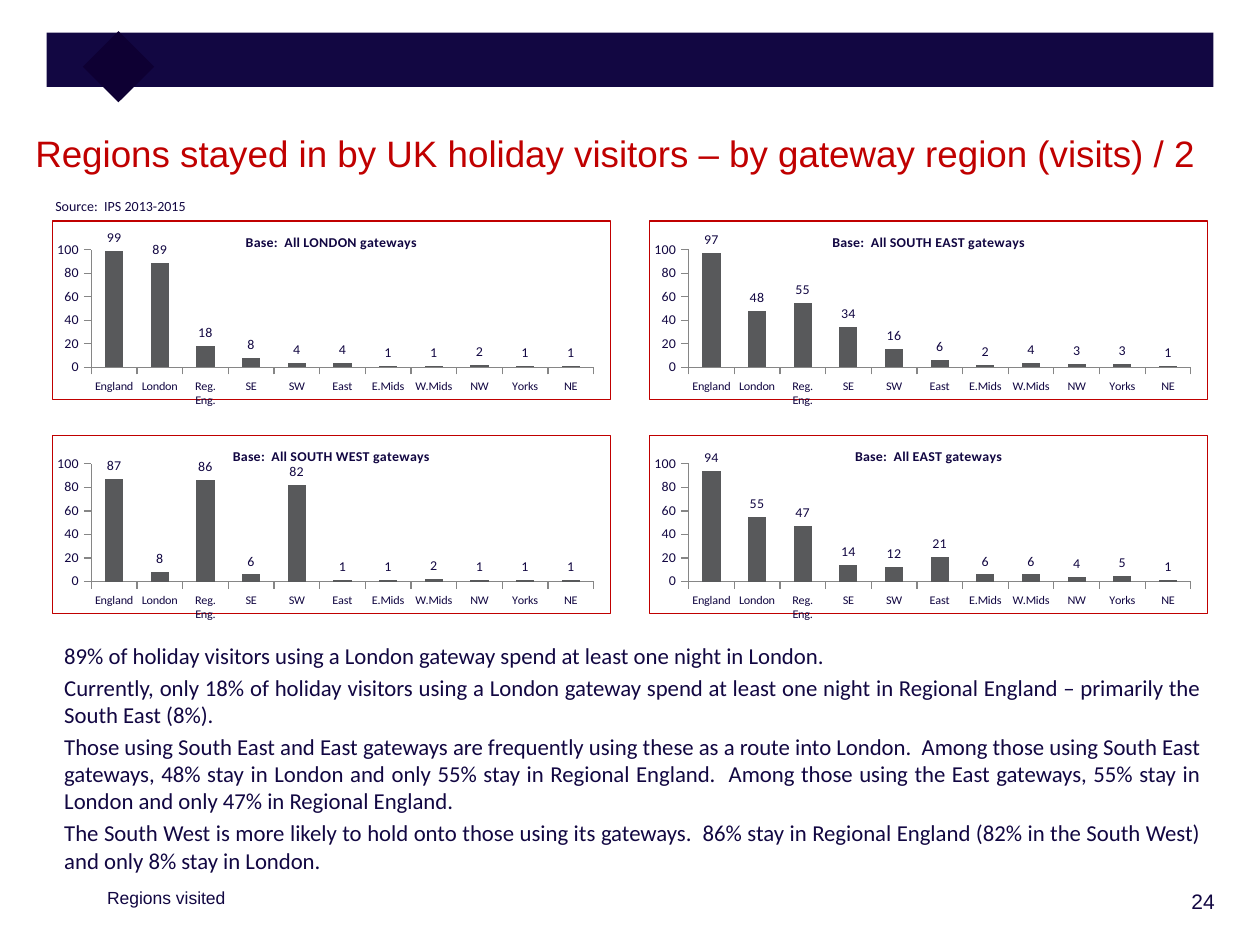
"""Build the slide on regions stayed in by UK holiday visitors, by gateway."""
from dataclasses import dataclass

from lxml import etree
from pptx import Presentation
from pptx.chart.data import CategoryChartData
from pptx.dml.color import RGBColor
from pptx.enum.chart import XL_CHART_TYPE, XL_LABEL_POSITION, XL_TICK_MARK
from pptx.enum.shapes import MSO_SHAPE
from pptx.enum.text import MSO_ANCHOR, MSO_AUTO_SIZE, PP_ALIGN
from pptx.oxml import parse_xml
from pptx.oxml.ns import nsdecls, qn
from pptx.util import Inches, Pt

COLUMNS = XL_CHART_TYPE.COLUMN_CLUSTERED
OUTSIDE_END = XL_LABEL_POSITION.OUTSIDE_END
TICK_OUTSIDE, TICK_NONE = XL_TICK_MARK.OUTSIDE, XL_TICK_MARK.NONE
RECTANGLE = MSO_SHAPE.RECTANGLE
TOP = MSO_ANCHOR.TOP
NO_FIT = MSO_AUTO_SIZE.NONE
LEFT, RIGHT, JUSTIFY = PP_ALIGN.LEFT, PP_ALIGN.RIGHT, PP_ALIGN.JUSTIFY

REGIONS = ["England", "London", "Reg. Eng.", "SE", "SW", "East",
           "E.Mids", "W.Mids", "NW", "Yorks", "NE"]
GATEWAYS = {
    "LONDON": [99, 89, 18, 8, 4, 4, 1, 1, 2, 1, 1],
    "SOUTH EAST": [97, 48, 55, 34, 16, 6, 2, 4, 3, 3, 1],
    "SOUTH WEST": [87, 8, 86, 6, 82, 1, 1, 2, 1, 1, 1],
    "EAST": [94, 55, 47, 14, 12, 21, 6, 6, 4, 5, 1],
}
FINDINGS = [
    "89% of holiday visitors using a London gateway spend at least one night in London.",
    "Currently, only 18% of holiday visitors using a London gateway spend at least one night "
    "in Regional England – primarily the South East (8%).",
    "Those using South East and East gateways are frequently using these as a route into London.  "
    "Among those using South East gateways, 48% stay in London and only 55% stay in Regional "
    "England.  Among those using the East gateways, 55% stay in London and only 47% in "
    "Regional England.",
    "The South West is more likely to hold onto those using its gateways.  86% stay in Regional "
    "England (82% in the South West) and only 8% stay in London.",
]


@dataclass(frozen=True)
class Theme:
    """Colours, fonts and type sizes of the slide."""
    navy: RGBColor = RGBColor.from_string("120742")
    dark: RGBColor = RGBColor.from_string("0E0033")
    red: RGBColor = RGBColor.from_string("C00000")
    bar: RGBColor = RGBColor.from_string("58595B")
    axis: RGBColor = RGBColor.from_string("868686")
    heading_font: str = "Arial"
    body_font: str = "Calibri"
    title_size: float = 21
    body_size: float = 13
    page_size: float = 12
    footer_size: float = 10
    small_size: float = 8
    category_size: float = 7


def set_font(font, name, size, color, bold=False):
    """Apply face, size, colour and weight to a font."""
    font.name, font.size, font.bold = name, Pt(size), bold
    font.color.rgb = color


def write(frame, texts, *, font, size, color, align=LEFT, gap=0, inset_top=0.05):
    """Fill a text frame with unbulleted paragraphs in one format."""
    frame.word_wrap = True
    frame.auto_size = NO_FIT
    frame.vertical_anchor = TOP
    frame.margin_top = Inches(inset_top)
    for index, text in enumerate(texts):
        para = frame.paragraphs[0] if index == 0 else frame.add_paragraph()
        properties = para._p.get_or_add_pPr()
        properties.set("marL", "0")
        properties.set("indent", "0")
        etree.SubElement(properties, qn("a:buNone"))
        para.alignment = align
        para.space_before = Pt(gap if index else 0)
        span = para.add_run()
        span.text = text
        set_font(span.font, font, size, color)


class SlideBuilder:
    """Holds the theme and the current slide."""

    def __init__(self, slide, theme):
        self.slide, self.theme = slide, theme

    def block(self, left, top, width, height, color, rotation=0):
        """Add a plain filled rectangle."""
        shape = self.slide.shapes.add_shape(
            RECTANGLE, Inches(left), Inches(top), Inches(width), Inches(height))
        shape.shadow.inherit = False
        shape.fill.solid()
        shape.fill.fore_color.rgb = color
        shape.line.fill.background()
        shape.rotation = rotation

    def placeholder(self, index, left, top, width, height, texts, **style):
        """Move a template placeholder and fill it."""
        box = self.slide.placeholders[index]
        box.left, box.top = Inches(left), Inches(top)
        box.width, box.height = Inches(width), Inches(height)
        write(box.text_frame, texts, **style)

    def label(self, left, top, width, height, text, **style):
        """Add a text box with one paragraph."""
        box = self.slide.shapes.add_textbox(
            Inches(left), Inches(top), Inches(width), Inches(height))
        write(box.text_frame, [text], **style)

    def chart(self, left, top, width, height, title, values):
        """Add a framed column chart of the regions."""
        theme = self.theme
        data = CategoryChartData(number_format="0")
        data.categories = REGIONS
        data.add_series("Series 1", values)
        chart = self.slide.shapes.add_chart(
            COLUMNS, Inches(left), Inches(top), Inches(width), Inches(height), data).chart
        set_font(chart.font, theme.body_font, theme.page_size, theme.navy)
        chart.has_legend = False
        chart.has_title = True
        chart.chart_title.include_in_layout = False
        para = chart.chart_title.text_frame.paragraphs[0]
        span = para.add_run()
        span.text = title
        set_font(span.font, theme.body_font, theme.small_size, theme.navy, bold=True)
        self.format_axes(chart)
        self.format_columns(chart.plots[0])
        self.frame_chart(chart)

    def format_axes(self, chart):
        """Set the scale, ticks and type of both axes."""
        theme = self.theme
        sizes = ((chart.category_axis, theme.category_size), (chart.value_axis, theme.small_size))
        for axis, size in sizes:
            axis.has_major_gridlines = False
            axis.major_tick_mark, axis.minor_tick_mark = TICK_OUTSIDE, TICK_NONE
            axis.format.line.color.rgb = theme.axis
            axis.format.line.width = Pt(0.75)
            set_font(axis.tick_labels.font, theme.body_font, size, theme.navy)
        scale = chart.value_axis
        scale.minimum_scale, scale.maximum_scale, scale.major_unit = 0, 100, 20
        scale.tick_labels.number_format = "0"
        scale.tick_labels.number_format_is_linked = False

    def format_columns(self, plot):
        """Colour the columns and show their values."""
        theme = self.theme
        plot.gap_width = 150
        plot.vary_by_categories = False
        fill = plot.series[0].format.fill
        fill.solid()
        fill.fore_color.rgb = theme.bar
        plot.has_data_labels = True
        labels = plot.data_labels
        labels.show_value = True
        labels.position = OUTSIDE_END
        labels.number_format, labels.number_format_is_linked = "0", False
        set_font(labels.font, theme.body_font, theme.small_size, theme.navy)

    def frame_chart(self, chart):
        """Fix the plot area and draw the chart border."""
        space = chart._chartSpace
        plot_area = space.chart.plotArea
        for old in plot_area.findall(qn("c:layout")):
            plot_area.remove(old)
        places = "".join(f'<c:{tag} val="{value}"/>' for tag, value in (
            ("layoutTarget", "inner"), ("xMode", "edge"), ("yMode", "edge"),
            ("x", 0.07), ("y", 0.16), ("w", 0.9), ("h", 0.66)))
        plot_area.insert(0, parse_xml(
            f'<c:layout {nsdecls("c")}><c:manualLayout>{places}</c:manualLayout></c:layout>'))
        space.find(qn("c:txPr")).addprevious(parse_xml(
            f'<c:spPr {nsdecls("c", "a")}><a:noFill/><a:ln w="{Pt(0.75)}"><a:solidFill>'
            f'<a:srgbClr val="{self.theme.red}"/></a:solidFill></a:ln></c:spPr>'))


def main():
    """Compose and save the deck."""
    theme = Theme()
    deck = Presentation()
    deck.slide_width, deck.slide_height = Inches(10), Inches(7.5)
    page = SlideBuilder(deck.slides.add_slide(deck.slide_layouts[3]), theme)
    heading = {"font": theme.heading_font, "color": theme.navy}
    body = {"font": theme.body_font, "color": theme.navy}

    page.block(0.37, 0.26, 9.26, 0.43, theme.navy)
    page.block(0.74, 0.33, 0.4, 0.4, theme.dark, rotation=45)
    page.placeholder(0, 0.18, 0.95, 9.64, 0.61,
                     ["Regions stayed in by UK holiday visitors – by gateway region (visits) / 2"],
                     font=theme.heading_font, color=theme.red, size=theme.title_size,
                     inset_top=0.09)
    page.label(0.34, 1.52, 2.02, 0.18, "Source:  IPS 2013-2015", size=theme.small_size, **body)
    for index, (gateway, values) in enumerate(GATEWAYS.items()):
        row, column = divmod(index, 2)
        page.chart(0.41 + 4.74 * column, 1.75 + 1.7 * row, 4.44, 1.48,
                   f"Base:  All {gateway} gateways", values)
    page.placeholder(1, 0.41, 5.04, 9.21, 2.03, FINDINGS, size=theme.body_size,
                     align=JUSTIFY, gap=2.6, **body)
    page.placeholder(2, 0.75, 6.99, 2.67, 0.3, ["Regions visited"],
                     size=theme.footer_size, **heading)
    page.label(8.53, 7, 1.21, 0.36, "24", size=theme.page_size, align=RIGHT, **heading)
    deck.save("out.pptx")


if __name__ == "__main__":
    main()
